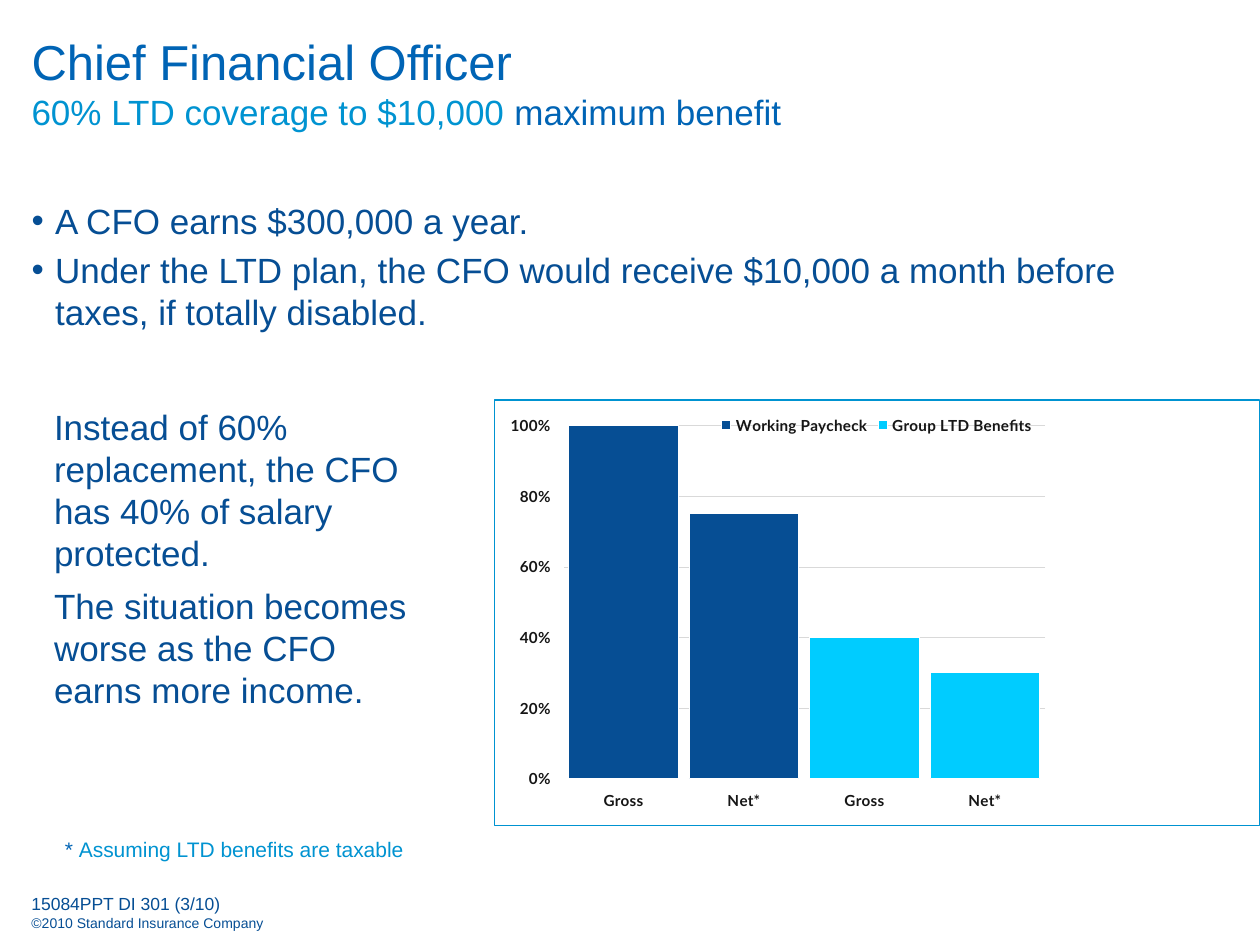
"""Build the Chief Financial Officer disability coverage slide."""
from lxml import etree
from pptx import Presentation
from pptx.chart.data import CategoryChartData
from pptx.dml.color import RGBColor
from pptx.enum.chart import XL_CHART_TYPE, XL_LEGEND_POSITION, XL_TICK_MARK
from pptx.enum.text import MSO_ANCHOR, MSO_AUTO_SIZE, PP_ALIGN
from pptx.oxml import parse_xml
from pptx.oxml.ns import nsdecls, qn
from pptx.util import Pt

STACKED = XL_CHART_TYPE.COLUMN_STACKED
LEGEND_TOP = XL_LEGEND_POSITION.TOP
CROSS = XL_TICK_MARK.CROSS
TOP, BOTTOM = MSO_ANCHOR.TOP, MSO_ANCHOR.BOTTOM
LEFT = PP_ALIGN.LEFT
NO_FIT = MSO_AUTO_SIZE.NONE
NAVY, BLUE, SKY, CYAN = "064E94", "0064B5", "0093D1", "00CCFF"
WHITE, GREY, BLACK = "FFFFFF", "D9D9D9", "161616"

color = RGBColor.from_string


def write_text(shape, box, paragraphs, frame_format):
    """Place a text shape and fill it with (paragraph format, runs) pairs."""
    shape.left, shape.top, shape.width, shape.height = map(Pt, box)
    frame = shape.text_frame
    defaults = {"word_wrap": True, "auto_size": NO_FIT, "vertical_anchor": TOP}
    for name, value in (defaults | frame_format).items():
        setattr(frame, name, value)
    for index, (paragraph_format, runs) in enumerate(paragraphs):
        paragraph = frame.add_paragraph() if index else frame.paragraphs[0]
        for name, value in ({"alignment": LEFT, "space_before": Pt(0)} | paragraph_format).items():
            setattr(paragraph, name, value)
        for text, size, shade in runs:
            if text == "\n":
                paragraph.add_line_break()
                continue
            run = paragraph.add_run()
            run.text = text
            run.font.name = "Arial"
            run.font.size = Pt(size)
            run.font.color.rgb = color(shade)


def set_layout(element, position, target, x, y, width, height):
    """Give a plot area or legend a fixed place inside the chart."""
    for layout in element.findall(qn("c:layout")):
        element.remove(layout)
    layout = etree.Element(qn("c:layout"))
    manual = etree.SubElement(layout, qn("c:manualLayout"))
    values = {"layoutTarget": target, "xMode": "edge", "yMode": "edge",
              "x": x, "y": y, "w": width, "h": height}
    for name, value in values.items():
        if value is not None:
            etree.SubElement(manual, qn(f"c:{name}")).set("val", str(value))
    element.insert(position, layout)


presentation = Presentation()
presentation.slide_width, presentation.slide_height = Pt(720), Pt(540)
slide = presentation.slides.add_slide(presentation.slide_layouts[1])
title, body = slide.placeholders
no_margins = dict.fromkeys(("margin_left", "margin_top", "margin_right", "margin_bottom"), 0)

write_text(title, (18, 18, 678, 72), [({}, [
    ("Chief Financial Officer", 28, BLUE), ("\n", 28, BLUE),
    ("60% LTD coverage to $10,000 ", 20, SKY), ("maximum benefit", 20, BLUE),
])], no_margins)

write_text(body, (18, 113.8, 678, 95.8), [
    ({}, [("A CFO earns $300,000 a year.", 20, NAVY)]),
    ({"space_before": Pt(4)}, [(
        "Under the LTD plan, the CFO would receive $10,000 a month before "
        "taxes, if totally disabled.", 20, NAVY)]),
], no_margins)
for paragraph in body.text_frame.paragraphs:
    properties = paragraph._p.get_or_add_pPr()
    properties.set("marL", str(Pt(13.5)))
    properties.set("indent", str(Pt(-13.5)))
    etree.SubElement(properties, qn("a:buChar")).set("char", "•")

text_boxes = [
    ((18, 506.9, 134.6, 25.2), [
        ({"line_spacing": 1.25}, [("15084PPT DI 301 (3/10)", 10, NAVY)]),
        ({}, [("©2010 Standard Insurance Company", 8, NAVY)]),
    ], no_margins | {"word_wrap": False, "vertical_anchor": BOTTOM}),
    ((23.8, 228.2, 216, 213), [
        ({"space_after": Pt(6)}, [(text, 20, NAVY)]) for text in (
            "Instead of 60% replacement, the CFO has 40% of salary protected.",
            "The situation becomes worse as the CFO earns more income.")
    ], {}),
    ((30, 462.2, 510, 36), [
        ({}, [("* ", 12, BLUE), ("Assuming LTD benefits are taxable", 12, SKY)]),
    ], {"margin_top": Pt(16)}),
]
for box, paragraphs, frame_format in text_boxes:
    write_text(slide.shapes.add_textbox(*map(Pt, box)), box, paragraphs, frame_format)

chart_data = CategoryChartData(number_format="0%")
chart_data.categories = ["Gross", "Net*", "Gross", "Net*"]
chart_data.add_series("Working Paycheck", (1, 0.75, 0, 0))
chart_data.add_series("Group LTD Benefits", (0, 0, 0.4, 0.3))
chart = slide.shapes.add_chart(STACKED, Pt(282.2), Pt(228.2), Pt(437.8), Pt(244), chart_data).chart
chart.has_title = False
for name, value in {"name": "Lato", "size": Pt(8.7), "bold": True}.items():
    setattr(chart.font, name, value)
chart.font.color.rgb = color(BLACK)

plot = chart.plots[0]
plot.gap_width, plot.overlap, plot.vary_by_categories = 10, 100, False
for series, shade in zip(plot.series, (NAVY, CYAN)):
    series.format.fill.solid()
    series.format.fill.fore_color.rgb = color(shade)
    series.format.line.color.rgb = color(WHITE)
    series.format.line.width = Pt(0.59)

value_axis = chart.value_axis
value_format = {"minimum_scale": 0, "maximum_scale": 1, "major_unit": 0.2, "has_major_gridlines": True}
for name, value in value_format.items():
    setattr(value_axis, name, value)
value_axis.tick_labels.number_format = "0%"
value_axis.tick_labels.number_format_is_linked = False
chart.category_axis.major_tick_mark = value_axis.major_tick_mark = CROSS
for line, shade, width in (
    (chart.category_axis.format.line, WHITE, 0.15),
    (value_axis.format.line, WHITE, 0.59),
    (value_axis.major_gridlines.format.line, GREY, 0.15),
):
    line.color.rgb = color(shade)
    line.width = Pt(width)

chart.has_legend = True
chart.legend.position = LEGEND_TOP
chart.legend.include_in_layout = True
chart_space = chart._chartSpace
set_layout(chart_space.find(".//" + qn("c:plotArea")), 0, "inner", 0.09, 0.06, 0.63, 0.83)
set_layout(chart_space.find(".//" + qn("c:legend")), 1, None, 0.29, 0.03, 0.42, 0.06)
border = parse_xml(
    f'<c:spPr {nsdecls("c", "a")}><a:noFill/><a:ln w="{Pt(0.75)}"><a:solidFill>'
    f'<a:srgbClr val="{SKY}"/></a:solidFill></a:ln></c:spPr>')
chart_space.find(qn("c:chart")).addnext(border)

presentation.save("out.pptx")
